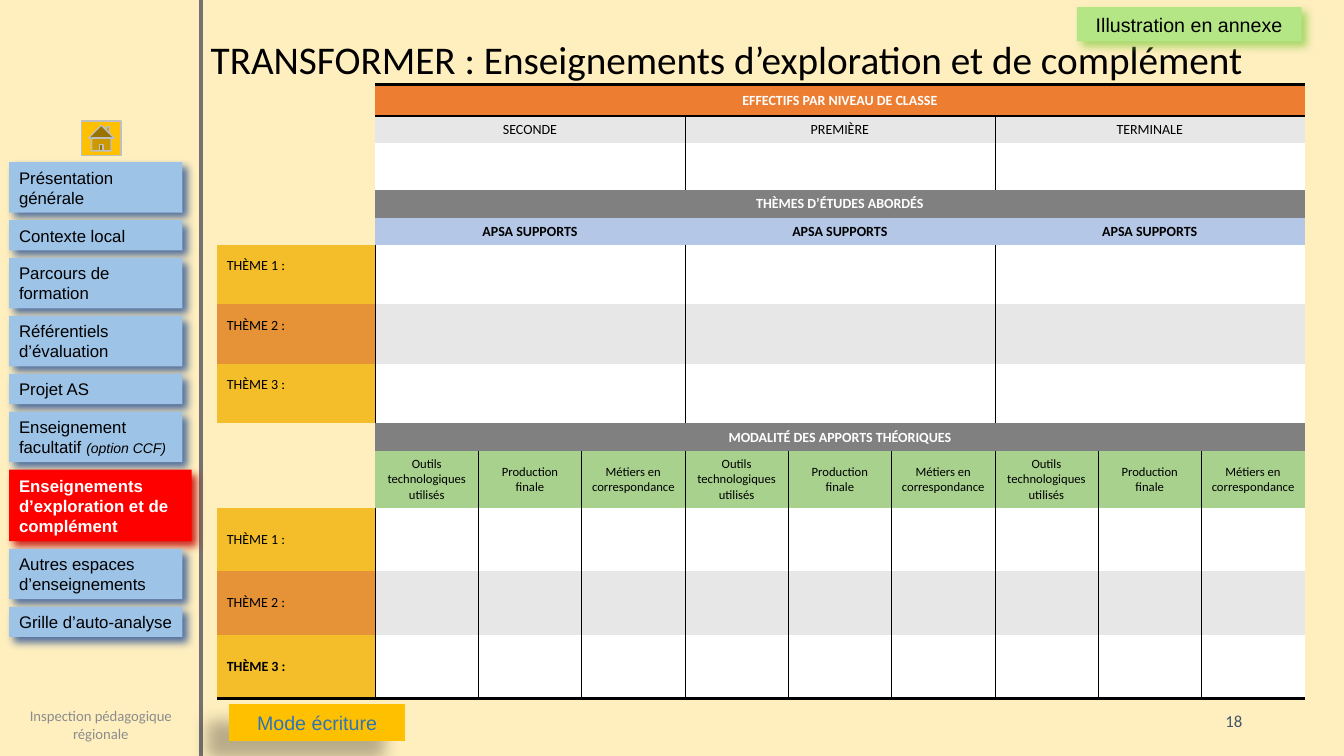
"""Builds the slide on exploration and complementary courses."""
from lxml import etree
from pptx import Presentation
from pptx.dml.color import RGBColor
from pptx.enum.shapes import MSO_CONNECTOR, MSO_SHAPE
from pptx.enum.text import MSO_ANCHOR, MSO_AUTO_SIZE, PP_ALIGN
from pptx.oxml.ns import qn
from pptx.util import Inches, Pt

RECT, HOME = MSO_SHAPE.RECTANGLE, MSO_SHAPE.ACTION_BUTTON_HOME
BLANK = MSO_SHAPE.ACTION_BUTTON_CUSTOM
LEFT, CENTER, RIGHT = PP_ALIGN.LEFT, PP_ALIGN.CENTER, PP_ALIGN.RIGHT
MIDDLE, TOP = MSO_ANCHOR.MIDDLE, MSO_ANCHOR.TOP

COLORS = {
    "background": "FFEFBF", "rule": "767171", "black": "000000", "white": "FFFFFF",
    "nav": "9DC3E6", "nav_shadow": "2F5597", "current": "FF0000",
    "current_shadow": "C00000", "button": "FFC000", "button_text": "2E75B6",
    "button_line": "BFBFBF", "annex": "B4E686", "annex_shadow": "92D050",
    "footer": "8C8C8C", "number": "44546A", "orange": "ED7D31", "band": "808080",
    "light": "E7E7E7", "apsa": "B4C7E7", "green": "A9D18E",
    "theme_odd": "F3BE29", "theme_even": "E69236",
}
TITLE = "TRANSFORMER : Enseignements d’exploration et de complément"
CURRENT = "Enseignements d’exploration et de complément"
NAV = [
    ("Présentation générale", 2), ("Contexte local", 1), ("Parcours de formation", 2),
    ("Référentiels d’évaluation", 2), ("Projet AS", 1), ("Enseignement facultatif ", 2),
    (CURRENT, 3), ("Autres espaces d’enseignements", 2), ("Grille d’auto-analyse", 1),
]
NAV_NOTES = {"Enseignement facultatif ": "(option CCF)"}
NAV_HEIGHTS = {1: 0.3, 2: 0.5, 3: 0.71}
NAV_TOP, NAV_LAST_TOP = 1.61, 6.02

LEVELS = ["SECONDE", "PREMIÈRE", "TERMINALE"]
MODES = ["Outils technologiques utilisés", "Production finale", "Métiers en correspondance"]
THEMES = [("THÈME 1 :", "theme_odd", "white"), ("THÈME 2 :", "theme_even", "light"),
          ("THÈME 3 :", "theme_odd", "white")]
ROW_FIELDS = ("label", "label_fill", "texts", "fill", "color", "bold", "size", "height", "ruled")
ROWS = [dict(zip(ROW_FIELDS, row)) for row in [
    ("", None, ["EFFECTIFS PAR NIVEAU DE CLASSE"], "orange", "white", True, 10, 0.31, False),
    ("", None, LEVELS, "light", "black", False, 10, 0.27, True),
    ("", None, [""] * 3, "white", "black", False, 10, 0.47, True),
    ("", None, ["THÈMES D’ÉTUDES ABORDÉS"], "band", "white", True, 10, 0.27, False),
    ("", None, ["APSA SUPPORTS"] * 3, "apsa", "black", True, 10, 0.27, False),
    *[(t, c, [""] * 3, f, "black", False, 10, 0.59, True) for t, c, f in THEMES],
    ("", None, ["MODALITÉ DES APPORTS THÉORIQUES"], "band", "white", True, 10, 0.28, False),
    ("", None, MODES * 3, "green", "black", False, 9, 0.56, True),
    *[(t, c, [""] * 9, f, "black", False, 10, 0.63, True) for t, c, f in THEMES],
]]
TABLE_BOX = (2.15, 0.84, 10.79, 6.09)
LABEL_WIDTH, DATA_COLS = 1.57, 9
NO_STYLE = "{2D5ABB26-0587-4C30-8999-92F81FD0307C}"


def rgb(name):
    return RGBColor.from_string(COLORS[name])


def write(tf, text, size, color, font="Calibri", align=LEFT, bold=False):
    p = tf.paragraphs[0]
    p.alignment = align
    f = p.font
    f.name, f.size, f.bold, f.color.rgb = font, Pt(size), bold, rgb(color)
    if text:
        p.add_run().text = text
    else:
        etree.SubElement(p._p, qn("a:endParaRPr"), sz=str(size * 100))
    return p


def write_shape(sp, *args, anchor=MIDDLE, **kwargs):
    sp.text_frame.word_wrap = True
    sp.text_frame.vertical_anchor = anchor
    return write(sp.text_frame, *args, **kwargs)


def add_shadow(sp, color, alpha, blur, dist, angle):
    effects = etree.SubElement(sp._element.spPr, qn("a:effectLst"))
    shadow = etree.SubElement(effects, qn("a:outerShdw"), blurRad=str(Pt(blur)),
                              dist=str(Pt(dist)), dir=str(angle * 60000),
                              algn="tl", rotWithShape="0")
    clr = etree.SubElement(shadow, qn("a:srgbClr"), val=COLORS[color])
    etree.SubElement(clr, qn("a:alpha"), val=str(alpha * 1000))


def add_box(s, kind, box, fill, shadow=None):
    sp = s.shapes.add_shape(kind, *map(Inches, box))
    sp.fill.solid()
    sp.fill.fore_color.rgb = rgb(fill)
    sp.line.fill.background()
    if shadow:
        add_shadow(sp, *shadow)
    else:
        sp.shadow.inherit = False
    return sp


def add_border(cell, side, width):
    tcPr = cell._tc.get_or_add_tcPr()
    ln = etree.SubElement(tcPr, qn("a:ln" + side), w=str(Pt(width)))
    fill = etree.SubElement(ln, qn("a:solidFill"))
    etree.SubElement(fill, qn("a:srgbClr"), val=COLORS["black"])


def add_navigation(s):
    heights = [NAV_HEIGHTS[lines] for _, lines in NAV]
    gap = (NAV_LAST_TOP - NAV_TOP - sum(heights[:-1])) / (len(NAV) - 1)
    top = NAV_TOP
    for (text, _), height in zip(NAV, heights):
        here = text == CURRENT
        name, width = ("current", 1.81) if here else ("nav", 1.72)
        sp = add_box(s, RECT, (0.09, top, width, height), name,
                     (name + "_shadow", 84, 6, 5, 45))
        p = write_shape(sp, text, 12, "white" if here else "black", "Arial", bold=here)
        if text in NAV_NOTES:
            r = p.add_run()
            r.text = NAV_NOTES[text]
            r.font.size, r.font.italic = Pt(10), True
        top += height + gap
    home = add_box(s, HOME, (0.81, 1.2, 0.39, 0.34), "button")
    home.line.color.rgb, home.line.width = rgb("button_line"), Pt(1)


def add_courses_table(s):
    table = s.shapes.add_table(len(ROWS), DATA_COLS + 1, *map(Inches, TABLE_BOX)).table
    table.first_row = table.horz_banding = False
    table._tbl.tblPr.find(qn("a:tableStyleId")).text = NO_STYLE
    table.columns[0].width = Inches(LABEL_WIDTH)
    for c in range(1, DATA_COLS + 1):
        table.columns[c].width = Inches((TABLE_BOX[2] - LABEL_WIDTH) / DATA_COLS)
    last = len(ROWS) - 1
    for i, row in enumerate(ROWS):
        table.rows[i].height = Inches(row["height"])
        span = DATA_COLS // len(row["texts"])
        for c in range(DATA_COLS + 1):
            cell = table.cell(i, c)
            starts, ends = (c - 1) % span == 0, c % span == 0
            if row["ruled"] and (c > 1 and starts or c == 1 and row["label"]):
                add_border(cell, "L", 0.25)
            if row["ruled"] and (0 < c < DATA_COLS and ends or c == 0 and row["label"]):
                add_border(cell, "R", 0.25)
            if i == 0 and c:
                add_border(cell, "T", 2)
            if i == last or i == 0 and c:
                add_border(cell, "B", 2)
            name = row["fill"] if c else row["label_fill"]
            if name:
                cell.fill.solid()
                cell.fill.fore_color.rgb = rgb(name)
            else:
                cell.fill.background()
            cell.vertical_anchor = MIDDLE
            if c:
                text = row["texts"][(c - 1) // span] if starts else ""
                write(cell.text_frame, text, row["size"], row["color"],
                      align=CENTER, bold=row["bold"])
            else:
                write(cell.text_frame, row["label"], 10, "black", bold=i == last)
                if row["label"] and span == 3:
                    cell.margin_bottom = Inches(0.22)
        if span > 1:
            for c in range(1, DATA_COLS + 1, span):
                table.cell(i, c).merge(table.cell(i, c + span - 1))


def main():
    prs = Presentation()
    prs.slide_width, prs.slide_height = Inches(13.33), Inches(7.5)
    s = prs.slides.add_slide(prs.slide_layouts[5])
    s.background.fill.solid()
    s.background.fill.fore_color.rgb = rgb("background")
    rule = s.shapes.add_connector(MSO_CONNECTOR.STRAIGHT, Inches(1.99), 0, Inches(1.99), Inches(7.5))
    rule.line.color.rgb, rule.line.width = rgb("rule"), Pt(3)
    etree.SubElement(rule._element.spPr, qn("a:effectLst"))
    title = s.shapes.title
    title.left, title.top, title.width, title.height = map(Inches, (1.99, 0.3, 10.92, 0.57))
    write_shape(title, TITLE, 28, "black", anchor=TOP)
    title.text_frame.auto_size = MSO_AUTO_SIZE.NONE
    add_navigation(s)
    mode = add_box(s, BLANK, (2.27, 6.98, 1.75, 0.37), "button", ("black", 28, 11.8, 19.7, 141))
    write_shape(mode, "Mode écriture", 14, "button_text", "Arial", CENTER)
    annex = add_box(s, RECT, (10.68, 0.07, 2.23, 0.34), "annex", ("annex_shadow", 80, 6, 5, 45))
    write_shape(annex, "Illustration en annexe", 14, "black", "Arial", CENTER)
    footer = s.shapes.add_textbox(*map(Inches, (0.14, 7.02, 1.72, 0.34)))
    write_shape(footer, "Inspection pédagogique régionale", 10.5, "footer", align=CENTER)
    number = s.shapes.add_textbox(*map(Inches, (11.94, 6.95, 0.48, 0.4)))
    write_shape(number, "18", 12, "number", align=RIGHT)
    add_courses_table(s)
    prs.save("out.pptx")


if __name__ == "__main__":
    main()
